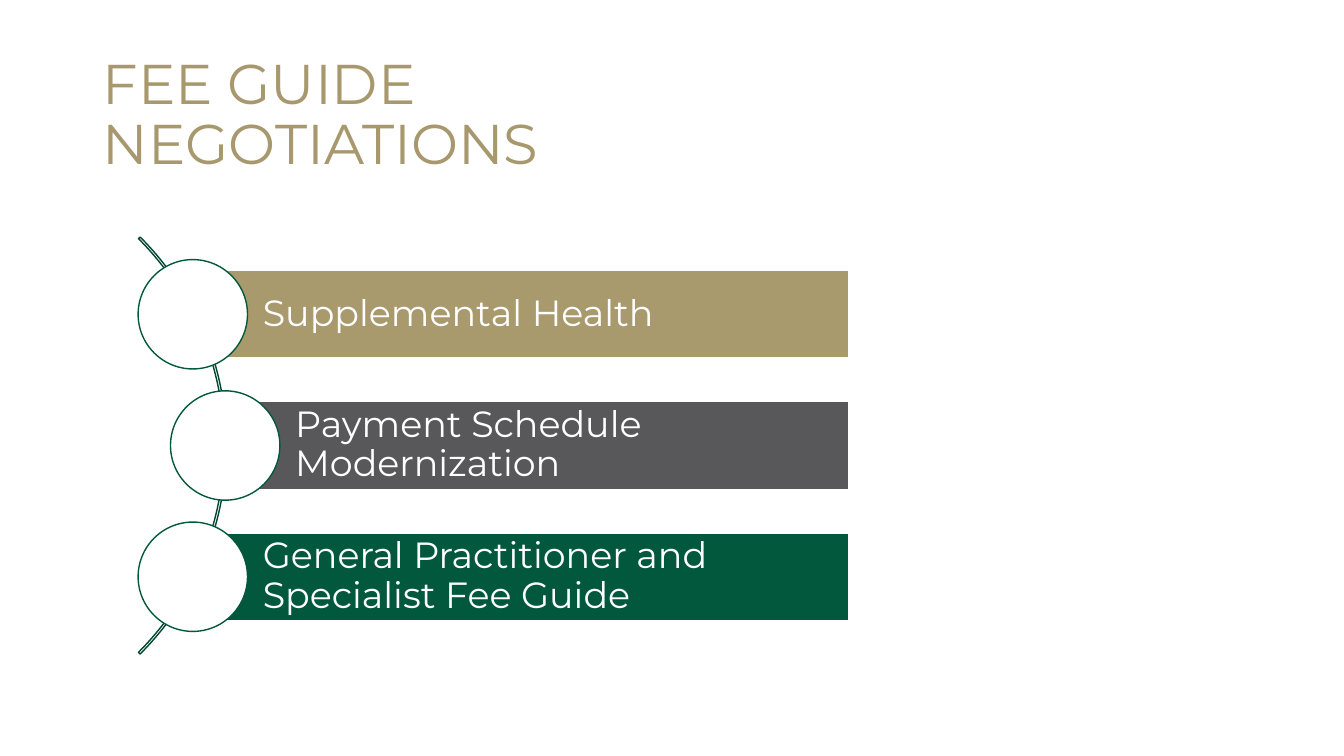
from pptx import Presentation
from pptx import util as u
from pptx.dml.color import RGBColor
from pptx.enum import shapes, text

COLORS = {
    "title": "A7986D", "gold": "A99A6E", "grey": "58585A",
    "green": "02583D", "arc": "024631", "white": "FFFFFF",
}
FONT = "Montserrat"
TOPICS = [
    (["Supplemental Health"], "gold"),
    (["Payment Schedule Modernization"], "grey"),
    (["General Practitioner and", "Specialist Fee Guide"], "green"),
]


def color(name):
    """Return the named colour."""
    return RGBColor.from_string(COLORS[name])


def add_run(paragraph, words, size, tint):
    """Add one styled run to a paragraph."""
    run = paragraph.add_run()
    run.text = words
    run.font.name, run.font.size = FONT, u.Pt(size)
    run.font.color.rgb = color(tint)


def add_outlined(slide, kind, box, line, fill=None):
    """Add a flat shape with a one-point outline and an optional fill."""
    shape = slide.shapes.add_shape(kind, *(u.Inches(v) for v in box))
    shape.shadow.inherit = False
    if fill:
        shape.fill.solid()
        shape.fill.fore_color.rgb = color(fill)
    else:
        shape.fill.background()
    shape.line.color.rgb = color(line)
    shape.line.width = u.Pt(1)
    return shape


def add_title(slide, box, lines):
    """Place the slide heading, one line of words per row."""
    heading = slide.shapes.add_textbox(*(u.Inches(v) for v in box)).text_frame
    heading.word_wrap = True
    heading.vertical_anchor = text.MSO_ANCHOR.MIDDLE
    paragraph = heading.paragraphs[0]
    paragraph.line_spacing = 0.9
    for index, words in enumerate(lines):
        if index:
            paragraph.add_line_break()
        add_run(paragraph, words, 40, "title")


def add_topic(slide, box, lines, fill):
    """Place a topic bar with the circle centred on its left end."""
    left, top, width, height = box
    bar = add_outlined(slide, shapes.MSO_SHAPE.RECTANGLE, box, "white", fill)
    label = bar.text_frame
    label.word_wrap = True
    label.vertical_anchor = text.MSO_ANCHOR.MIDDLE
    label.margin_left = u.Inches(0.8 * height)
    label.margin_top = label.margin_right = label.margin_bottom = u.Inches(0.07)
    for index, words in enumerate(lines):
        paragraph = label.add_paragraph() if index else label.paragraphs[0]
        paragraph.alignment = text.PP_ALIGN.LEFT
        paragraph.line_spacing = 0.9
        add_run(paragraph, words, 26, "white")
    size = 1.25 * height
    circle = (left - size / 2, top + height / 2 - size / 2, size, size)
    add_outlined(slide, shapes.MSO_SHAPE.OVAL, circle, "green", "white")


def add_topic_list(slide, box, topics):
    """Place the arc and its topics on a grid of five rows."""
    left, top, width, height = box
    row = height / 5
    span = 6.74 * row
    arc_box = (left + 1.01 * row - span, top + height / 2 - span / 2, span, span)
    arc = add_outlined(slide, shapes.MSO_SHAPE.BLOCK_ARC, arc_box, "arc")
    for index, value in enumerate((189, 27, 0.004)):
        arc.adjustments[index] = value
    for index, (lines, fill) in enumerate(topics):
        indent = row * (0.625 + 0.37 * (index % 2))
        bar = (left + indent, top + row * (0.5 + 1.5 * index), width - indent, row)
        add_topic(slide, bar, lines, fill)


def main():
    """Build the slide and save it."""
    deck = Presentation()
    deck.slide_width, deck.slide_height = u.Inches(13.33), u.Inches(7.5)
    slide = deck.slides.add_slide(deck.slide_layouts[6])
    add_title(slide, (0.92, 0.43, 11.5, 1.45), ["FEE GUIDE", "NEGOTIATIONS"])
    add_topic_list(slide, (1.37, 2.25, 7.05, 4.34), TOPICS)
    deck.save("out.pptx")


if __name__ == "__main__":
    main()
